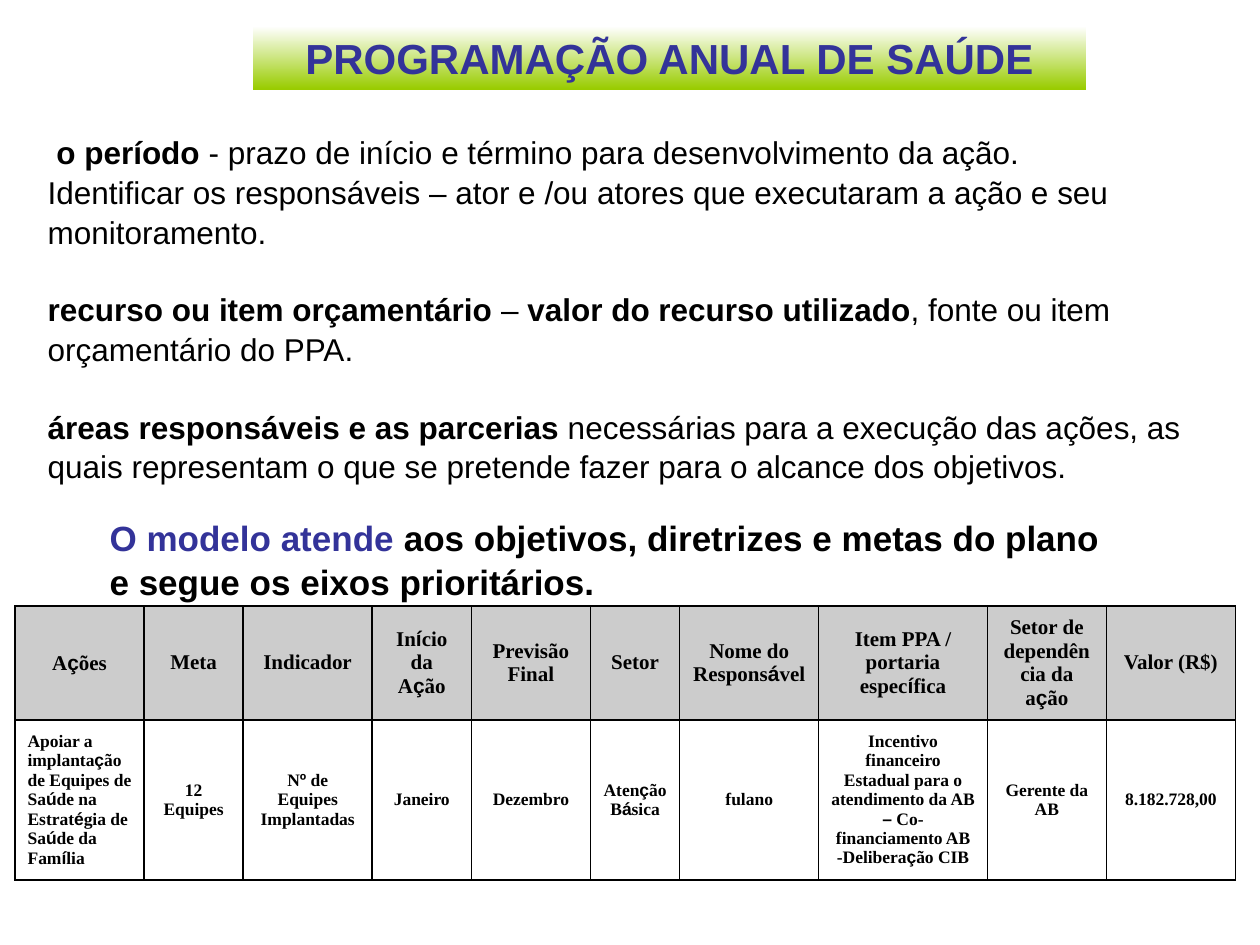
from itertools import groupby

from pptx import Presentation
from pptx.dml.color import RGBColor
from pptx.enum.text import MSO_ANCHOR, MSO_AUTO_SIZE, PP_ALIGN
from pptx.oxml import parse_xml
from pptx.oxml.ns import nsdecls
from pptx.util import Pt

BLACK = RGBColor(0, 0, 0)
WHITE = RGBColor(255, 255, 255)
BLUE = RGBColor(0x33, 0x33, 0x99)
GREEN = RGBColor(0x99, 0xCC, 0x00)
GRAY = RGBColor(0xCC, 0xCC, 0xCC)

TITLE = "PROGRAMAÇÃO ANUAL DE SAÚDE"

# Paragraphs: size, left indent, space before, runs of (text, bold, colour)
BODY = [
    (18, 0, 0, [(" ", False, BLACK), ("o período ", True, BLACK),
                ("- prazo de início e término para desenvolvimento da ação.", False, BLACK)]),
    (18, 0, 0, [("Identificar os responsáveis – ator e /ou atores que executaram a ação "
                 "e seu monitoramento.", False, BLACK)]),
    (18, 0, 21.7, [("recurso ou item orçamentário ", True, BLACK), ("– ", False, BLACK),
                   ("valor do recurso utilizado", True, BLACK),
                   (", fonte ou item orçamentário do PPA.", False, BLACK)]),
    (18, 0, 21.7, [("áreas responsáveis e as parcerias", True, BLACK),
                   (" necessárias para a execução das ações, as quais representam o que se "
                    "pretende fazer para o alcance dos objetivos.", False, BLACK)]),
    (20, 35.4, 16.5, [("O modelo atende ", True, BLUE),
                      ("aos objetivos, diretrizes e metas do plano", True, BLACK)]),
    (20, 35.4, 0, [("e segue os eixos prioritários.", True, BLACK)]),
]

HEADER = ["Ações", "Meta", "Indicador", "Início da Ação", "Previsão Final", "Setor",
          "Nome do Responsável", "Item PPA / portaria específica",
          "Setor de dependência da ação", "Valor (R$)"]
ACTION = ["Apoiar a implantação de Equipes de Saúde na Estratégia de Saúde da Família",
          "12 Equipes", "Nº de Equipes Implantadas", "Janeiro", "Dezembro",
          "Atenção Básica", "fulano",
          "Incentivo financeiro Estadual para o atendimento da AB – "
          "Co-financiamento AB -Deliberação CIB",
          "Gerente da AB", "8.182.728,00"]
# Rows: texts, height, font size, fill
ROWS = [(HEADER, 65, 12, GRAY), (ACTION, 91.5, 10, None)]
COLUMN_UNITS = [13, 10, 13, 10, 12, 9, 14, 17, 12, 13]
UNIT = 5.67
ARIAL_CHARACTERS = "çíáúéº–"


def place(shape, left, top, width, height):
    shape.left, shape.top, shape.width, shape.height = map(Pt, (left, top, width, height))


def add_run(paragraph, text, font_name, size, bold, color):
    run = paragraph.add_run()
    run.text = text
    run.font.name = font_name
    run.font.size = Pt(size)
    run.font.bold = bold
    run.font.color.rgb = color


def add_title(slide):
    title = slide.shapes.title
    place(title, 144.5, 15, 476, 36)
    title.fill.gradient()
    title.fill.gradient_angle = 270
    for stop, color in zip(title.fill.gradient_stops, (WHITE, GREEN)):
        stop.color.rgb = color
    frame = title.text_frame
    frame.auto_size = MSO_AUTO_SIZE.NONE
    frame.vertical_anchor = MSO_ANCHOR.MIDDLE
    paragraph = frame.paragraphs[0]
    paragraph.alignment = PP_ALIGN.CENTER
    add_run(paragraph, TITLE, "Arial", 24, True, BLUE)


def add_body(slide):
    body = slide.placeholders[1]
    place(body, 20, 71.5, 669, 269)
    frame = body.text_frame
    frame.auto_size = MSO_AUTO_SIZE.NONE
    frame.vertical_anchor = MSO_ANCHOR.TOP
    for index, (size, indent, space_before, runs) in enumerate(BODY):
        paragraph = frame.add_paragraph() if index else frame.paragraphs[0]
        properties = paragraph._p.get_or_add_pPr()
        properties.set("marL", str(Pt(indent)))
        properties.set("indent", "0")
        properties.append(parse_xml(f"<a:buNone {nsdecls('a')}/>"))
        paragraph.space_before = Pt(space_before)
        paragraph.line_spacing = 1.05
        for text, bold, color in runs:
            add_run(paragraph, text, "Arial", size, bold, color)


def add_borders(cell):
    for side in ("lnL", "lnR", "lnT", "lnB"):
        cell._tc.get_or_add_tcPr().append(parse_xml(
            f'<a:{side} {nsdecls("a")} w="{Pt(1)}"><a:solidFill>'
            f'<a:srgbClr val="{BLACK}"/></a:solidFill></a:{side}>'))


def add_schedule(slide):
    widths = [units * UNIT for units in COLUMN_UNITS]
    height = sum(row[1] for row in ROWS)
    table = slide.shapes.add_table(len(ROWS), len(widths), Pt(8.6), Pt(346.3),
                                   Pt(sum(widths)), Pt(height)).table
    table.first_row = table.horz_banding = False
    for column, width in zip(table.columns, widths):
        column.width = Pt(width)
    for row, (texts, row_height, size, color) in zip(table.rows, ROWS):
        row.height = Pt(row_height)
        for cell, text in zip(row.cells, texts):
            add_borders(cell)
            if color is None:
                cell.fill.background()
            else:
                cell.fill.solid()
                cell.fill.fore_color.rgb = color
            cell.vertical_anchor = MSO_ANCHOR.MIDDLE
            paragraph = cell.text_frame.paragraphs[0]
            paragraph.alignment = PP_ALIGN.LEFT if text == ACTION[0] else PP_ALIGN.CENTER
            for in_arial, part in groupby(text, lambda letter: letter in ARIAL_CHARACTERS):
                font_name = "Arial" if in_arial else "Times New Roman"
                add_run(paragraph, "".join(part), font_name, size, True, BLACK)


def main():
    presentation = Presentation()
    presentation.slide_width, presentation.slide_height = Pt(720), Pt(540)
    slide = presentation.slides.add_slide(presentation.slide_layouts[1])
    add_body(slide)
    add_title(slide)
    add_schedule(slide)
    presentation.save("out.pptx")


if __name__ == "__main__":
    main()
